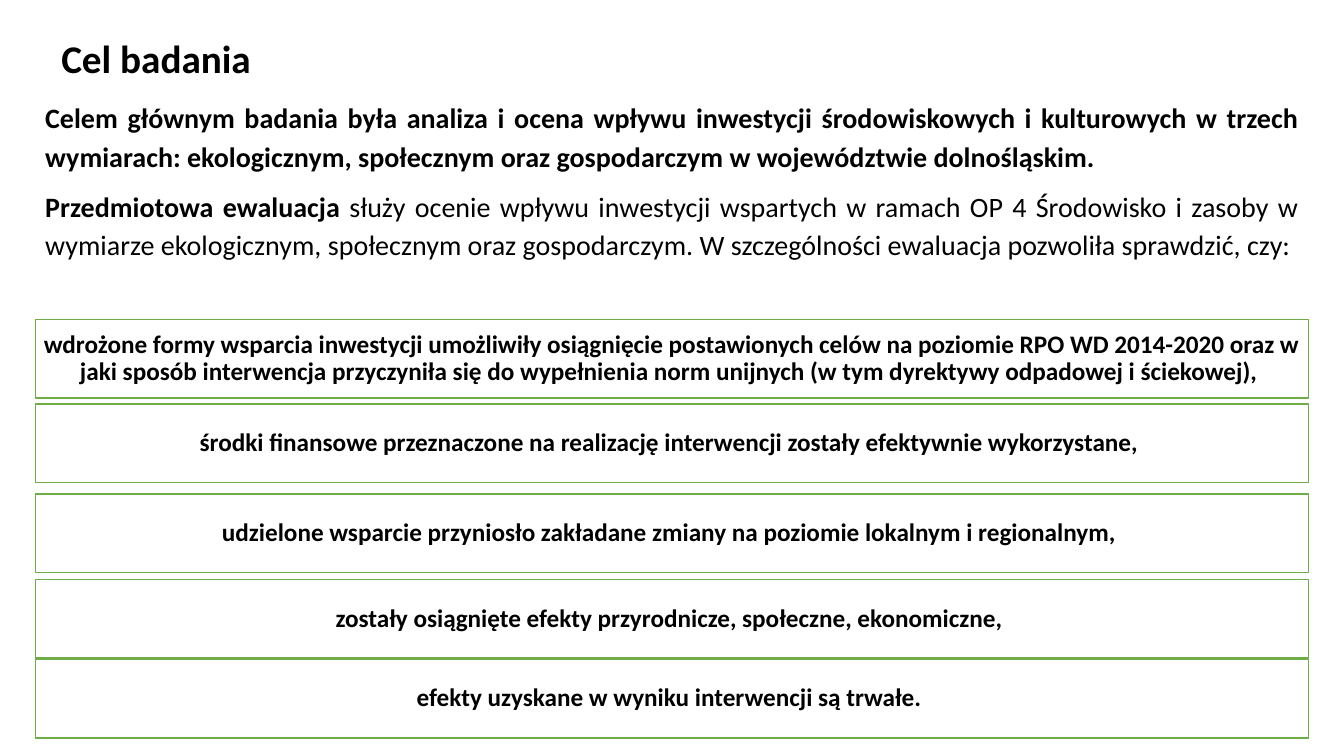
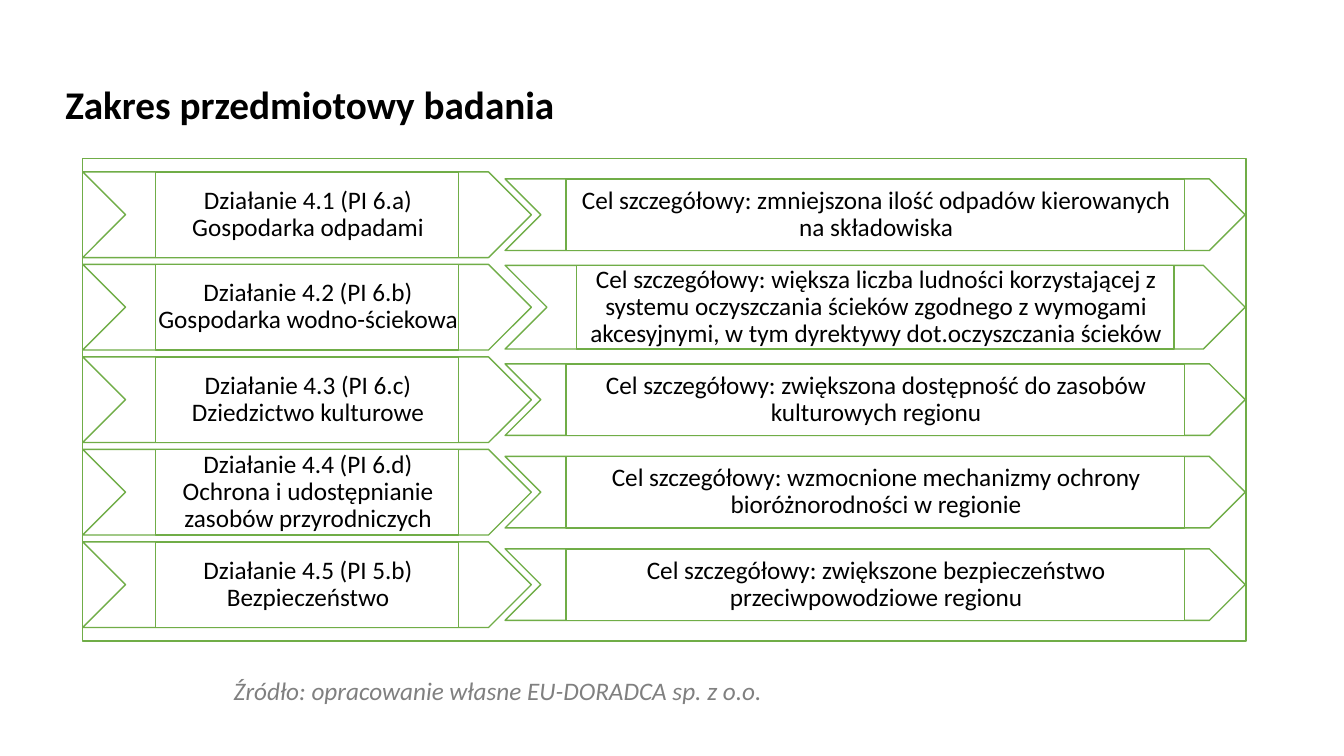
from pptx import Presentation
from pptx.dml.color import RGBColor
from pptx.enum.shapes import MSO_SHAPE
from pptx.enum.text import MSO_ANCHOR, PP_ALIGN
from pptx.util import Inches, Pt

COLORS = {"text": "000000", "muted": "808080", "fill": "FFFFFF", "line": "70AD47"}


class Deck:
    """Hold the shared style and the current slide."""

    font = "Calibri"

    def __init__(self):
        self.prs = Presentation()
        self.prs.slide_width = Inches(13.33)
        self.prs.slide_height = Inches(7.5)
        self.s = None

    def slide(self, title, x, y):
        self.s = self.prs.slides.add_slide(self.prs.slide_layouts[6])
        self.text([[(title, True)]], x, y, 8.8, 0.7, size=28)

    def add_text(self, p, text, size, color="text", bold=False, italic=False):
        for i, line in enumerate(text.split("\n")):
            if i:
                p.add_line_break()
            r = p.add_run()
            r.text = line
            r.font.name = self.font
            r.font.size = Pt(size)
            r.font.bold = bold
            r.font.italic = italic
            r.font.color.rgb = RGBColor.from_string(COLORS[color])

    def text(self, paragraphs, x, y, w, h, size, align=PP_ALIGN.LEFT,
             before=4, color="text", italic=False):
        tf = self.s.shapes.add_textbox(Inches(x), Inches(y), Inches(w), Inches(h)).text_frame
        tf.word_wrap = True
        for i, runs in enumerate(paragraphs):
            p = tf.add_paragraph() if i else tf.paragraphs[0]
            p.alignment = align
            p.line_spacing = 1.15
            p.space_before = Pt(before)
            p.space_after = Pt(4)
            for text, bold in runs:
                self.add_text(p, text, size, color, bold, italic)

    def shape(self, kind, x, y, w, h):
        sp = self.s.shapes.add_shape(kind, Inches(x), Inches(y), Inches(w), Inches(h))
        sp.shadow.inherit = False
        sp.fill.solid()
        sp.fill.fore_color.rgb = RGBColor.from_string(COLORS["fill"])
        sp.line.color.rgb = RGBColor.from_string(COLORS["line"])
        sp.line.width = Pt(1)
        return sp

    def box(self, text, x, y, w, h, bold=False, insets=(0.02, 0.01, 0, 0.01)):
        tf = self.shape(MSO_SHAPE.RECTANGLE, x, y, w, h).text_frame
        tf.word_wrap = True
        tf.vertical_anchor = MSO_ANCHOR.MIDDLE
        tf.margin_left, tf.margin_top, tf.margin_right, tf.margin_bottom = map(Inches, insets)
        p = tf.paragraphs[0]
        p.alignment = PP_ALIGN.CENTER
        p.line_spacing = 0.9
        self.add_text(p, text, 18, bold=bold)

    def arrow(self, text, x, middle, w, h):
        y, inset = middle - h / 2, 0.85 * h
        self.shape(MSO_SHAPE.CHEVRON, x, y, w, h).adjustments[0] = 0.5
        self.box(text, x + inset, y, w - 2 * inset, h)


def build_goals(deck):
    deck.slide("Cel badania", 0.51, 0.22)
    deck.text([
        [("Celem głównym badania była analiza i ocena wpływu inwestycji środowiskowych "
          "i kulturowych w trzech wymiarach: ekologicznym, społecznym oraz gospodarczym "
          "w województwie dolnośląskim.", True)],
        [("Przedmiotowa ewaluacja ", True),
         ("służy ocenie wpływu inwestycji wspartych w ramach OP 4 Środowisko i zasoby "
          "w wymiarze ekologicznym, społecznym oraz gospodarczym. W szczególności "
          "ewaluacja pozwoliła sprawdzić, czy:", False)],
    ], 0.35, 0.9, 12.63, 1.9, size=20, align=PP_ALIGN.JUSTIFY)
    questions = [
        (3.17, "wdrożone formy wsparcia inwestycji umożliwiły osiągnięcie postawionych celów "
               "na poziomie RPO WD 2014-2020 oraz w jaki sposób interwencja przyczyniła się "
               "do wypełnienia norm unijnych (w tym dyrektywy odpadowej i ściekowej), "),
        (4.01, "środki finansowe przeznaczone na realizację interwencji zostały efektywnie "
               "wykorzystane, "),
        (4.9, "udzielone wsparcie przyniosło zakładane zmiany na poziomie lokalnym "
              "i regionalnym, "),
        (5.75, "zostały osiągnięte efekty przyrodnicze, społeczne, ekonomiczne, "),
        (6.54, "efekty uzyskane w wyniku interwencji są trwałe. "),
    ]
    for y, question in questions:
        deck.box(question, 0.35, y, 12.63, 0.78, bold=True, insets=(0.07,) * 4)


def build_scope(deck):
    deck.slide("Zakres przedmiotowy badania", 0.55, 0.68)
    deck.shape(MSO_SHAPE.RECTANGLE, 0.82, 1.57, 11.54, 4.79)
    measures = [
        ("4.1 (PI 6.a)", "Gospodarka odpadami", 0.71,
         "zmniejszona ilość odpadów kierowanych na składowiska"),
        ("4.2 (PI 6.b)", "Gospodarka wodno-ściekowa", 0.83,
         "większa liczba ludności korzystającej z systemu oczyszczania ścieków zgodnego "
         "z wymogami akcesyjnymi, w tym dyrektywy dot.oczyszczania ścieków"),
        ("4.3 (PI 6.c)", "Dziedzictwo kulturowe", 0.71,
         "zwiększona dostępność do zasobów kulturowych regionu"),
        ("4.4 (PI 6.d)", "Ochrona i udostępnianie zasobów przyrodniczych", 0.71,
         "wzmocnione mechanizmy ochrony bioróżnorodności w regionie"),
        ("4.5 (PI 5.b)", "Bezpieczeństwo", 0.71,
         "zwiększone bezpieczeństwo przeciwpowodziowe regionu"),
    ]
    first, last = 2.13, 5.8
    pitch = (last - first) / (len(measures) - 1)
    for i, (code, name, height, goal) in enumerate(measures):
        middle = first + i * pitch
        deck.arrow(f"Działanie {code}\n{name}", 0.82, middle, 4.45, 0.85)
        deck.arrow(f"Cel szczegółowy: {goal}", 5.01, middle, 7.34, height)
    deck.text([[("Źródło: opracowanie własne EU-DORADCA sp. z o.o.", False)]],
              2.22, 6.61, 6.67, 0.43, size=18, before=0, color="muted", italic=True)


def main():
    deck = Deck()
    build_goals(deck)
    build_scope(deck)
    deck.prs.save("out.pptx")


if __name__ == "__main__":
    main()
